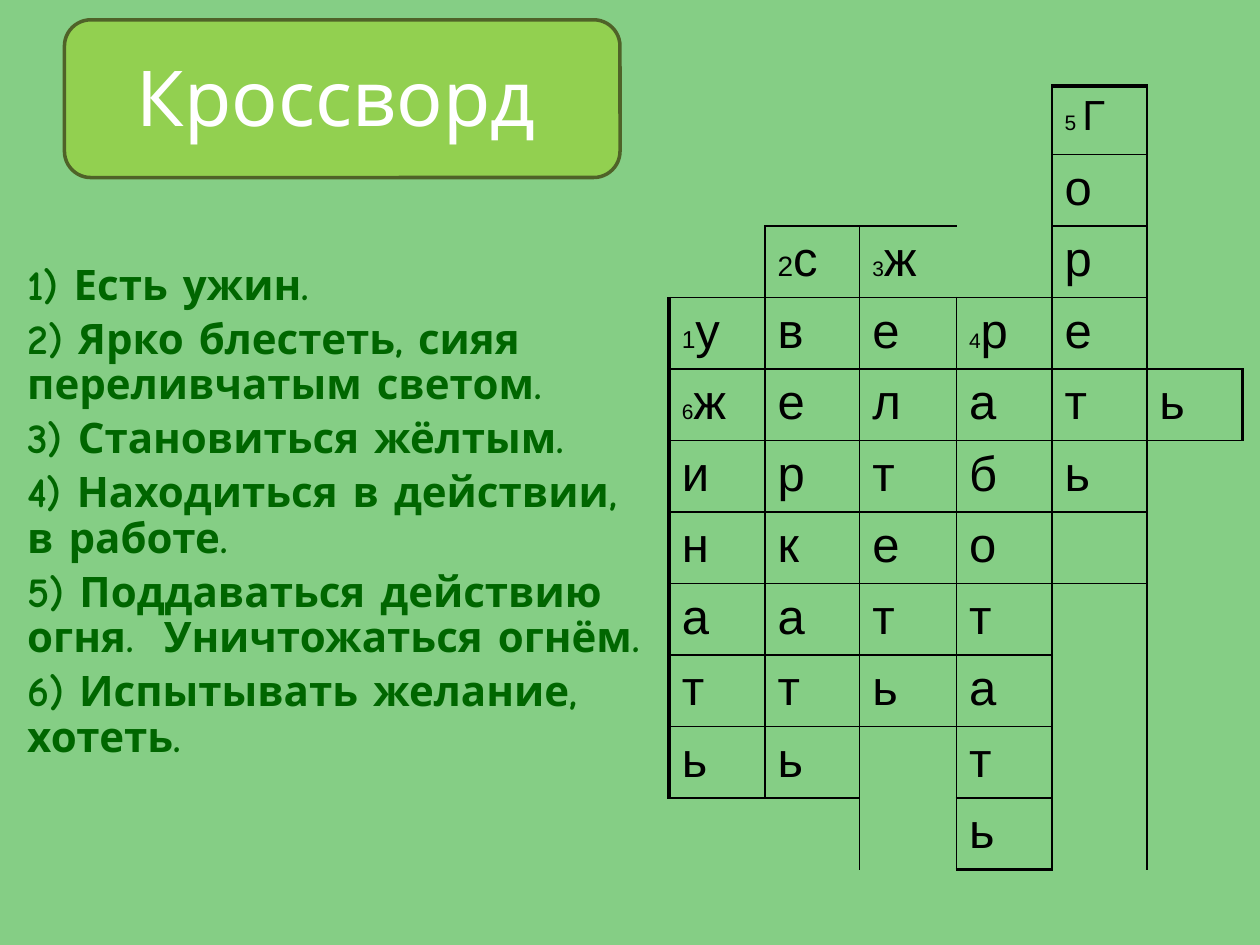
from dataclasses import dataclass

from lxml.etree import SubElement
from pptx import Presentation
from pptx.dml.color import RGBColor
from pptx.enum.shapes import MSO_SHAPE
from pptx.enum.text import MSO_ANCHOR, PP_ALIGN
from pptx.oxml.ns import qn
from pptx.util import Cm, Pt


@dataclass(frozen=True)
class Theme:
    background: str = "85CE85"
    banner: str = "92D050"
    banner_line: str = "4F6228"
    title: str = "FFFFFF"
    clue: str = "006600"
    ink: str = "000000"
    text_font: str = "Comic Neue"
    grid_font: str = "Arial"
    title_size: float = 44
    clue_size: float = 24
    letter_size: float = 28
    number_size: float = 12
    thin: float = 1
    thick: float = 2.25


CLUES = [
    "1) Есть ужин.",
    "2) Ярко блестеть, сияя переливчатым светом.",
    "3) Становиться жёлтым.",
    "4) Находиться в действии, в работе.",
    "5) Поддаваться действию огня.  Уничтожаться огнём.",
    "6) Испытывать желание, хотеть.",
]
# Each word: column, first row, letters
WORDS = [
    (0, 3, "ужинать"),
    (1, 2, "сверкать"),
    (2, 2, "желтеть"),
    (3, 3, "работать"),
    (4, 0, "Гореть "),
    (5, 4, "ь"),
]
NUMBERS = {(3, 0): "1", (2, 1): "2", (2, 2): "3", (3, 3): "4", (0, 4): "5 ", (4, 0): "6"}
SIZES = {"1": 14, "2": 16, "Г": 24}
# Each blank area: first cell, last cell, ruled sides
BLANKS = [
    ((0, 0), (2, 0), "B"),
    ((0, 1), (1, 1), "B"),
    ((0, 2), (1, 2), "B"),
    ((0, 3), (2, 3), "RB"),
    ((0, 5), (3, 5), "LB"),
    ((5, 5), (10, 5), "LT"),
    ((7, 4), (10, 4), "LT"),
    ((9, 2), (10, 2), "LTR"),
    ((10, 0), (10, 1), "T"),
]
HEAVY = {(0, 4): "T", (4, 5): "R", (10, 3): "B"} | {(row, 0): "L" for row in range(3, 10)}
COLUMNS = [1.93, 1.91, 1.95, 1.93, 1.91, 1.93]
ROWS = [1.39] * 2 + [1.42] + [1.39] * 8
NO_STYLE = "{2D5ABB26-0587-4C30-8999-92F81FD0307C}"


class Page:
    def __init__(self, deck, theme):
        self.theme = theme
        self.slide = deck.slides.add_slide(deck.slide_layouts[6])
        fill = self.slide.background.fill
        fill.solid()
        fill.fore_color.rgb = RGBColor.from_string(theme.background)

    def style(self, font, name, size, color, bold=False):
        font.name, font.size, font.bold = name, Pt(size), bold
        font.color.rgb = RGBColor.from_string(color)

    def banner(self, left, top, width, height):
        shape = self.slide.shapes.add_shape(
            MSO_SHAPE.ROUNDED_RECTANGLE, Cm(left), Cm(top), Cm(width), Cm(height))
        shape.shadow.inherit = False
        shape.fill.solid()
        shape.fill.fore_color.rgb = RGBColor.from_string(self.theme.banner)
        shape.line.color.rgb = RGBColor.from_string(self.theme.banner_line)
        shape.line.width = Pt(2)

    def text(self, left, top, width, height, lines, size, color, bold=False,
             align=PP_ALIGN.LEFT, anchor=MSO_ANCHOR.TOP, spacing=1.0, before=0):
        frame = self.slide.shapes.add_textbox(Cm(left), Cm(top), Cm(width), Cm(height)).text_frame
        frame.word_wrap = True
        frame.vertical_anchor = anchor
        frame.text = "\n".join(lines)
        for para in frame.paragraphs:
            para.alignment = align
            para.line_spacing = spacing
            para.space_before = Pt(before)
            self.style(para.font, self.theme.text_font, size, color, bold)

    def borders(self, cell, sides, heavy=""):
        properties = cell._tc.get_or_add_tcPr()
        for side in "LRTB":
            width = self.theme.thick if side in heavy else self.theme.thin
            line = SubElement(properties, qn(f"a:ln{side}"), w=str(Pt(width)))
            if side in sides:
                fill = SubElement(line, qn("a:solidFill"))
                SubElement(fill, qn("a:srgbClr"), val=self.theme.ink)
            else:
                SubElement(line, qn("a:noFill"))
        cell.fill.background()

    def letter(self, cell, number, letter):
        para = cell.text_frame.paragraphs[0]
        for content, size in ((number, self.theme.number_size), (letter, self.theme.letter_size)):
            if content.strip():
                span = para.add_run()
                span.text = content
                self.style(span.font, self.theme.grid_font, SIZES.get(content, size), self.theme.ink)

    def crossword(self, left, top):
        frame = self.slide.shapes.add_table(
            len(ROWS), len(COLUMNS), Cm(left), Cm(top), Cm(sum(COLUMNS)), Cm(sum(ROWS)))
        table = frame.table
        table.first_row = table.horz_banding = False
        table._tbl.tblPr.find(qn("a:tableStyleId")).text = NO_STYLE
        for column, width in zip(table.columns, COLUMNS):
            column.width = Cm(width)
        for row, height in zip(table.rows, ROWS):
            row.height = Cm(height)
        for first, last, sides in BLANKS:
            cell = table.cell(*first)
            cell.merge(table.cell(*last))
            self.borders(cell, sides)
        for column, start, word in WORDS:
            for row, letter in enumerate(word, start):
                place = (row, column)
                cell = table.cell(*place)
                self.letter(cell, NUMBERS.get(place, ""), letter)
                self.borders(cell, "LRTB", HEAVY.get(place, ""))


def main():
    deck = Presentation()
    deck.slide_width, deck.slide_height = Cm(25.4), Cm(19.05)
    theme = Theme()
    page = Page(deck, theme)
    page.banner(1.3, 0.4, 11.2, 3.18)
    page.text(1.27, 0.76, 11.02, 2.36, ["Кроссворд"], theme.title_size, theme.title,
              align=PP_ALIGN.CENTER, anchor=MSO_ANCHOR.MIDDLE)
    page.text(0.3, 5.2, 13, 11.8, CLUES, theme.clue_size, theme.clue,
              bold=True, spacing=0.9, before=5)
    page.crossword(13.49, 1.73)
    deck.save("out.pptx")


if __name__ == "__main__":
    main()
